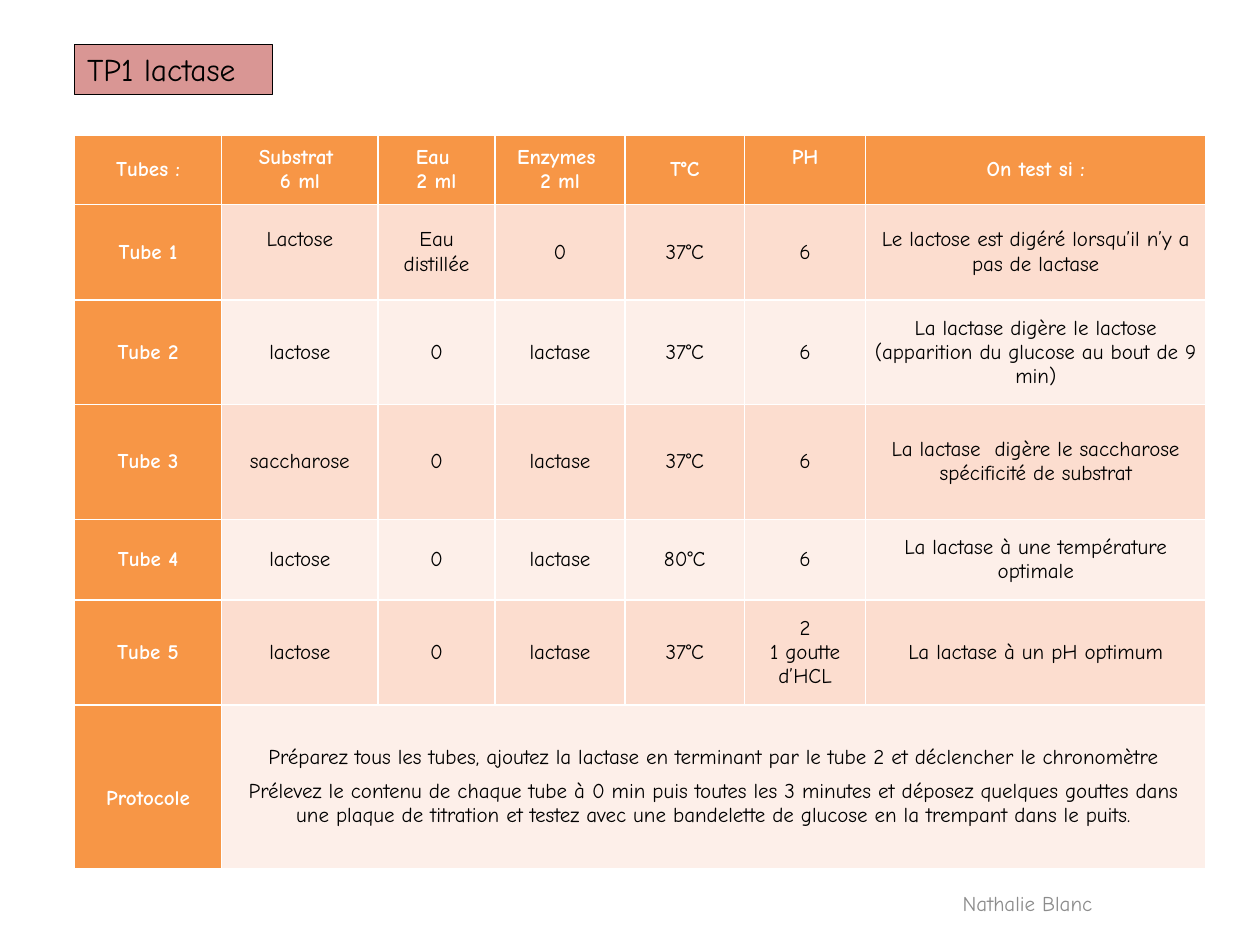
from dataclasses import dataclass

from pptx import Presentation
from pptx.dml.color import RGBColor as Rgb
from pptx.enum.text import MSO_ANCHOR as Anchor, MSO_AUTO_SIZE as Fit, PP_ALIGN as Align
from pptx.util import Cm, Pt


@dataclass(frozen=True)
class Theme:
    """Colours, font and type sizes of the slide."""
    font: str = "Comic Neue"
    head: str = "F79646"
    bands: tuple = ("FDEFE9", "FCDDCF")
    badge: str = "D99694"
    dark: str = "000000"
    light: str = "FFFFFF"
    grey: str = "8C8C8C"
    body: int = 12
    title: int = 18


THEME = Theme()
COLS = (2.97, 3.15, 2.36, 2.62, 2.41, 2.44, 6.86)
ROWS = (1.4, 1.93, 2.11, 2.31, 1.63, 2.11, 3.3)
LINE = 0.49
CELLS = (
    ("Tubes :", "Substrat \n6 ml", "Eau \n2 ml", "Enzymes \n2 ml", "T°C", "PH", "On test si :"),
    ("Tube 1", "Lactose", "Eau distillée", "0", "37°C", "6",
     "Le lactose est digéré lorsqu’il n’y a pas de lactase"),
    ("Tube 2", "lactose", "0", "lactase", "37°C", "6",
     "La lactase digère le lactose\n(apparition du glucose au bout de 9 min)"),
    ("Tube 3", "saccharose", "0", "lactase", "37°C", "6",
     "La lactase  digère le saccharose\nspécificité de substrat"),
    ("Tube 4", "lactose", "0", "lactase", "80°C", "6",
     "La lactase à une température optimale"),
    ("Tube 5", "lactose", "0", "lactase", "37°C", "2\n1 goutte d’HCL",
     "La lactase à un pH optimum"),
    ("Protocole",
     "Préparez tous les tubes, ajoutez la lactase en terminant par le tube 2 "
     "et déclencher le chronomètre\n"
     "Prélevez le contenu de chaque tube à 0 min puis toutes les 3 minutes et déposez "
     "quelques gouttes dans une plaque de titration et testez avec une bandelette "
     "de glucose en la trempant dans le puits."),
)


def write(frame, text, size=THEME.body, color=THEME.dark, bold=False,
          align=Align.CENTER, before=0):
    """Fill a text frame, one paragraph per line of text."""
    frame.word_wrap = True
    for i, line in enumerate(text.split("\n")):
        para = frame.add_paragraph() if i else frame.paragraphs[0]
        para.alignment = align
        para.space_before = Pt(before)
        run = para.add_run()
        run.text = line
        font = run.font
        font.name, font.size, font.bold = THEME.font, Pt(size), bold
        font.color.rgb = Rgb.from_string(color)


def paint(item, color):
    """Give a shape or cell a solid fill."""
    item.fill.solid()
    item.fill.fore_color.rgb = Rgb.from_string(color)


def add_title(slide, text):
    """Turn the title placeholder into a framed badge."""
    badge = slide.shapes.title
    badge.left, badge.top, badge.width, badge.height = Cm(1.5), Cm(0.89), Cm(3.99), Cm(1.02)
    paint(badge, THEME.badge)
    badge.line.color.rgb = Rgb.from_string(THEME.dark)
    badge.line.width = Pt(0.75)
    frame = badge.text_frame
    frame.auto_size = Fit.NONE
    frame.vertical_anchor = Anchor.TOP
    write(frame, text, size=THEME.title, align=Align.LEFT)


def add_cell(cell, text, head, band, before=0):
    """Format one table cell and write its text."""
    cell.vertical_anchor = Anchor.MIDDLE
    cell.margin_left = cell.margin_right = Cm(0.18)
    cell.margin_top = cell.margin_bottom = 0
    paint(cell, THEME.head if head else band)
    write(cell.text_frame, text, color=THEME.light if head else THEME.dark,
          bold=head, before=before)


def add_grid(slide):
    """Add the table of tubes with its protocol row."""
    shape = slide.shapes.add_table(len(ROWS), len(COLS), Cm(1.5), Cm(2.72),
                                   Cm(sum(COLS)), Cm(sum(ROWS)))
    table = shape.table
    table.first_col = True
    for col, width in zip(table.columns, COLS):
        col.width = Cm(width)
    for row, height in zip(table.rows, ROWS):
        row.height = Cm(height)
    last = len(ROWS) - 1
    table.cell(last, 1).merge(table.cell(last, len(COLS) - 1))
    for r, texts in enumerate(CELLS):
        for c, text in enumerate(texts):
            add_cell(table.cell(r, c), text, r == 0 or c == 0, THEME.bands[r % 2],
                     before=6 if r == last and c else 0)
    for r, c in ((0, 5), (1, 1)):
        table.cell(r, c).margin_bottom = Cm(LINE)
    table.cell(last, 0).margin_top = Cm(LINE)


def add_name(slide, text):
    """Add the author's name at the foot of the slide."""
    box = slide.shapes.add_textbox(Cm(16.97), Cm(17.7), Cm(7.49), Cm(1.02))
    box.text_frame.vertical_anchor = Anchor.MIDDLE
    write(box.text_frame, text, color=THEME.grey)


def main():
    """Build and save the slide."""
    deck = Presentation()
    deck.slide_width, deck.slide_height = Cm(25.4), Cm(19.05)
    slide = deck.slides.add_slide(deck.slide_layouts[5])
    add_grid(slide)
    add_title(slide, "TP1 lactase")
    add_name(slide, "Nathalie Blanc")
    deck.save("out.pptx")


if __name__ == "__main__":
    main()
